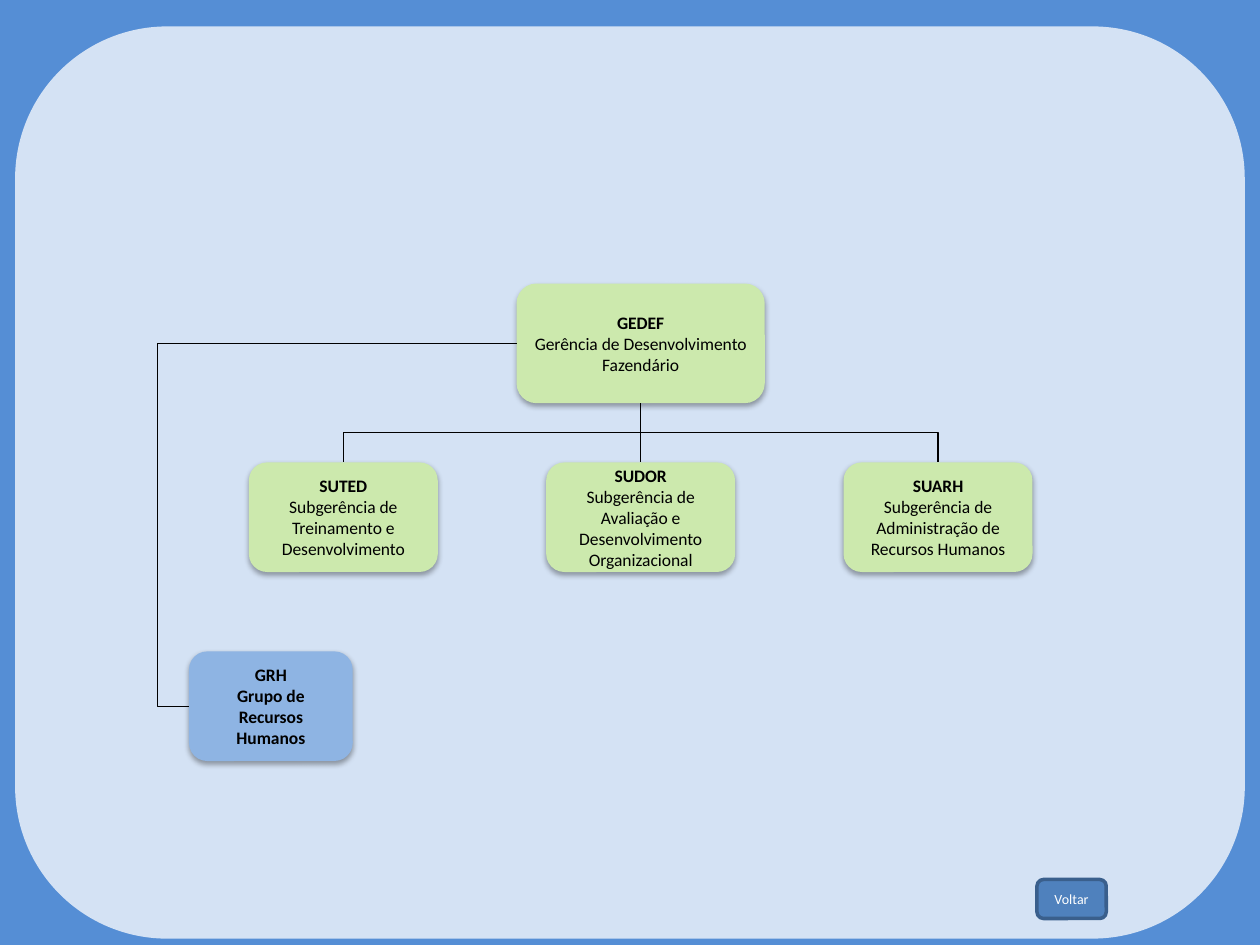
from lxml.etree import SubElement
from pptx import Presentation
from pptx.dml.color import RGBColor
from pptx.enum.shapes import MSO_CONNECTOR, MSO_SHAPE
from pptx.enum.text import MSO_ANCHOR, PP_ALIGN
from pptx.oxml.ns import qn
from pptx.util import Inches, Pt

COLORS = {
    "background": "558ED5", "panel": "D4E2F4", "unit": "CCE9AD",
    "group": "8EB4E3", "button": "4F81BD", "button_line": "3A5F8C",
    "black": "000000", "white": "FFFFFF",
}


class OrgChart:
    """Holds the style and the current slide."""
    font = "Calibri"

    def __init__(self, page):
        self.page = page
        page.background.fill.solid()
        page.background.fill.fore_color.rgb = self.color("background")

    def color(self, name):
        return RGBColor.from_string(COLORS[name])

    def rounded(self, left, top, width, height, fill, line=None):
        box = self.page.shapes.add_shape(
            MSO_SHAPE.ROUNDED_RECTANGLE,
            Inches(left), Inches(top), Inches(width), Inches(height))
        box.shadow.inherit = False
        box.fill.solid()
        box.fill.fore_color.rgb = self.color(fill)
        if line:
            box.line.color.rgb = self.color(line)
            box.line.width = Pt(2)
        else:
            box.line.fill.background()
        return box

    def label(self, box, lines, size=10, color="black"):
        """Each line is a pair of text and bold."""
        frame = box.text_frame
        frame.word_wrap = True
        frame.vertical_anchor = MSO_ANCHOR.MIDDLE
        for index, (text, bold) in enumerate(lines):
            para = frame.add_paragraph() if index else frame.paragraphs[0]
            para.alignment = PP_ALIGN.CENTER
            span = para.add_run()
            span.text = text
            span.font.name = self.font
            span.font.size = Pt(size)
            span.font.bold = bold
            span.font.color.rgb = self.color(color)

    def unit(self, left, top, width, height, code, name, fill="unit", bold_name=False):
        box = self.rounded(left, top, width, height, fill)
        self.label(box, [(code, True), (name, bold_name)])
        effects = box._element.spPr.find(qn("a:effectLst"))
        shadow = SubElement(effects, qn("a:outerShdw"), blurRad="40000",
                            dist="23000", dir="5400000", rotWithShape="0")
        shade = SubElement(shadow, qn("a:srgbClr"), val=COLORS["black"])
        SubElement(shade, qn("a:alpha"), val="35000")

    def elbow(self, start, end, bend=0.5, downward=False):
        """Bent line that leaves sideways, or from below if downward."""
        (x1, y1), (x2, y2) = start, end
        rotation = 0
        if downward:
            # Lay the line out sideways about its centre, then turn it
            center_x, center_y = (x1 + x2) / 2, (y1 + y2) / 2
            half_run, half_rise = (y2 - y1) / 2, abs(x2 - x1) / 2
            rotation = 90
            if x2 >= x1:
                rotation, half_run = 270, -half_run
            x1, x2 = center_x - half_run, center_x + half_run
            y1, y2 = center_y - half_rise, center_y + half_rise
        line = self.page.shapes.add_connector(
            MSO_CONNECTOR.ELBOW, Inches(x1), Inches(y1), Inches(x2), Inches(y2))
        line.line.color.rgb = self.color("black")
        line.line.width = Pt(0.75)
        properties = line._element.spPr
        SubElement(properties, qn("a:effectLst"))
        properties.find(qn("a:xfrm")).set("rot", str(rotation * 60000))
        guides = properties.find(qn("a:prstGeom")).find(qn("a:avLst"))
        SubElement(guides, qn("a:gd"), name="adj1", fmla=f"val {round(bend * 100000)}")


def main():
    deck = Presentation()
    deck.slide_width, deck.slide_height = Inches(10), Inches(7.5)
    chart = OrgChart(deck.slides.add_slide(deck.slide_layouts[6]))

    # Panel
    chart.rounded(0.12, 0.21, 9.76, 7.24, "panel")

    # Management and its lines to the three divisions
    left, top, width, height = 4.1, 2.25, 1.97, 0.95
    center = left + width / 2
    division_top, division_width, step = 3.67, 1.5, 2.36
    divisions = [
        ("SUTED", "Subgerência de Treinamento e Desenvolvimento"),
        ("SUDOR", "Subgerência de Avaliação e Desenvolvimento Organizacional"),
        ("SUARH", "Subgerência de Administração de Recursos Humanos"),
    ]
    chart.unit(left, top, width, height, "GEDEF",
               "Gerência de Desenvolvimento Fazendário")
    for index, (code, name) in enumerate(divisions):
        middle = center + (index - 1) * step
        chart.unit(middle - division_width / 2, division_top,
                   division_width, 0.87, code, name)
        chart.elbow((center, top + height), (middle, division_top), downward=True)

    # Staff group, reached round the left side
    group_left, group_top, group_height, lane = 1.5, 5.17, 0.87, 1.25
    chart.unit(group_left, group_top, 1.3, group_height, "GRH",
               "Grupo de Recursos Humanos", fill="group", bold_name=True)
    chart.elbow((left, top + height / 2),
                (group_left, group_top + group_height / 2),
                bend=(left - lane) / (left - group_left))

    # Back button
    button = chart.rounded(8.23, 6.98, 0.55, 0.31, "button", "button_line")
    chart.label(button, [("Voltar", False)], size=8, color="white")

    deck.save("out.pptx")


if __name__ == "__main__":
    main()
